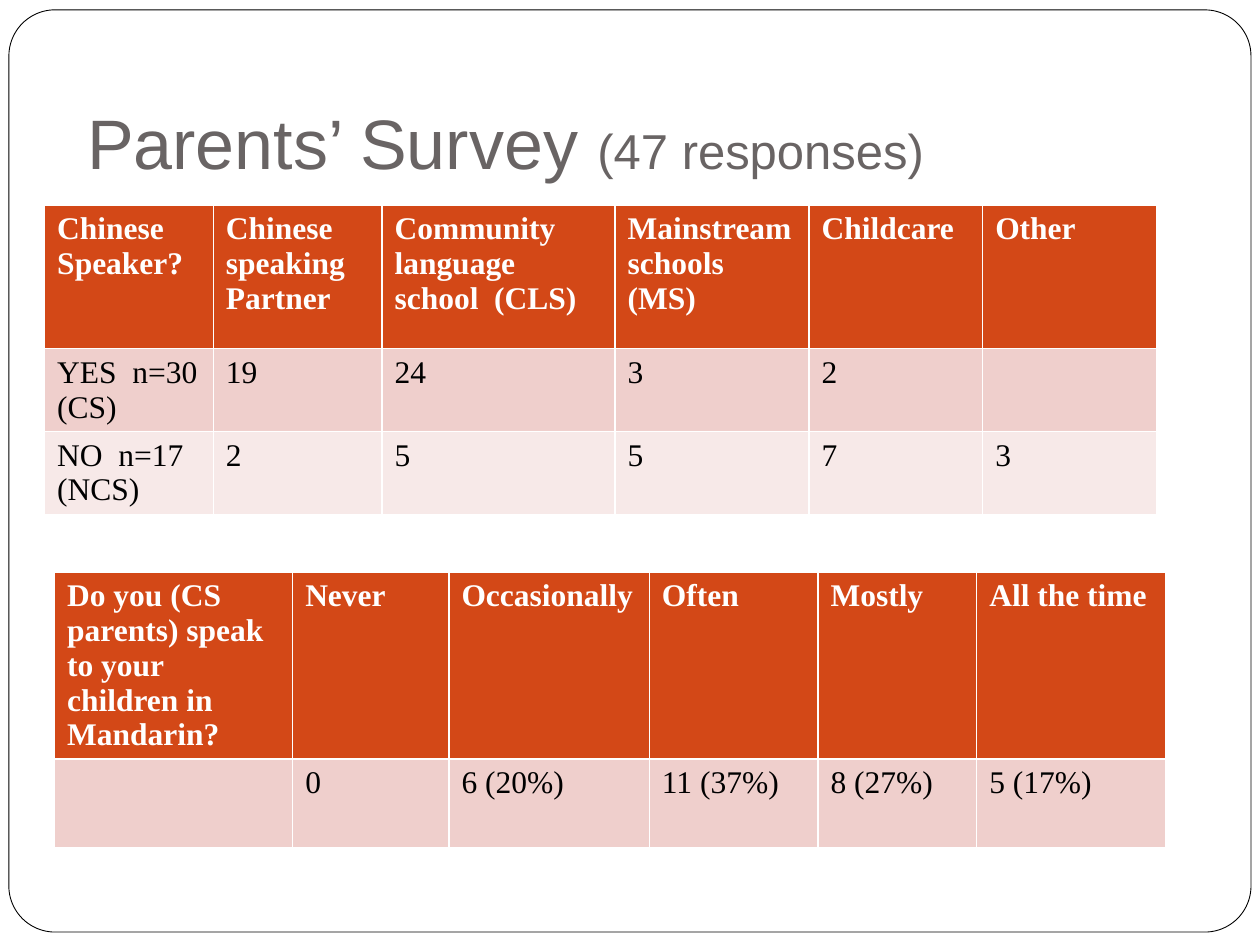
from dataclasses import dataclass

import pptx
import pptx.dml.color
import pptx.enum.shapes
import pptx.enum.text
import pptx.util

Cm = pptx.util.Cm
Pt = pptx.util.Pt
RGBColor = pptx.dml.color.RGBColor

WHITE = RGBColor(0xFF, 0xFF, 0xFF)
BLACK = RGBColor(0, 0, 0)
GREY = RGBColor(0x69, 0x64, 0x64)
RUST = RGBColor(0xD3, 0x48, 0x17)
ROSE = RGBColor(0xEF, 0xCF, 0xCC)
PALE = RGBColor(0xF7, 0xE9, 0xE8)
BANDS = (ROSE, PALE)


@dataclass
class Grid:
    """A survey table; lengths are in centimetres."""
    left: float
    top: float
    cols: list[float]
    rows: list[float]
    cells: list[list[str]]


SCHOOLS = Grid(
    0.9, 4.13, [3.4, 3.4, 4.7, 3.91, 3.5, 3.5], [2.9, 1.67, 1.67],
    [["Chinese Speaker?", "Chinese speaking Partner",
      "Community language school  (CLS)", "Mainstream schools (MS)",
      "Childcare", "Other"],
     ["YES  n=30\n(CS)", "19", "24", "3", "2", ""],
     ["NO  n=17\n(NCS)", "2", "5", "5", "7", "3"]])

SPEECH = Grid(
    1.1, 11.53, [4.8, 3.15, 4.04, 3.4, 3.2, 3.81], [3.76, 1.78],
    [["Do you (CS parents) speak to your children in Mandarin?", "Never",
      "Occasionally", "Often", "Mostly", "All the time"],
     ["", "0", "6 (20%)", "11 (37%)", "8 (27%)", "5 (17%)"]])


def draw_frame(slide) -> None:
    kind = pptx.enum.shapes.MSO_SHAPE.ROUNDED_RECTANGLE
    frame = slide.shapes.add_shape(kind, Cm(0.18), Cm(0.2), Cm(25.04), Cm(18.59))
    frame.adjustments[0] = 0.05
    frame.shadow.inherit = False
    frame.fill.solid()
    frame.fill.fore_color.rgb = WHITE
    frame.line.color.rgb = BLACK
    frame.line.width = Pt(0.5)


def draw_title(slide) -> None:
    title = slide.shapes.title
    # Bring the title in front of the frame
    slide.shapes.element.append(title.element)
    title.left, title.top = Cm(1.5), Cm(0.76)
    title.width, title.height = Cm(20.4), Cm(3.18)
    text = title.text_frame
    text.margin_bottom = Cm(0.25)
    text.vertical_anchor = pptx.enum.text.MSO_ANCHOR.BOTTOM
    line = text.paragraphs[0]
    line.alignment = pptx.enum.text.PP_ALIGN.LEFT
    line.font.name = "Arial"
    line.font.color.rgb = GREY
    for words, size in (("Parents’ Survey ", 40), ("(47 responses)", 28)):
        run = line.add_run()
        run.text = words
        run.font.size = Pt(size)


def fill_cell(cell, words: str, back: RGBColor, head: bool) -> None:
    cell.fill.solid()
    cell.fill.fore_color.rgb = back
    cell.text = words
    for line in cell.text_frame.paragraphs:
        line.font.name = "Times New Roman"
        line.font.size = Pt(18)
        line.font.bold = head
        line.font.color.rgb = WHITE if head else BLACK


def draw_grid(slide, grid: Grid) -> None:
    # The default table style supplies the white rules
    table = slide.shapes.add_table(
        len(grid.rows), len(grid.cols), Cm(grid.left), Cm(grid.top),
        Cm(sum(grid.cols)), Cm(sum(grid.rows))).table
    for col, width in zip(table.columns, grid.cols):
        col.width = Cm(width)
    for row, height in zip(table.rows, grid.rows):
        row.height = Cm(height)
    for r, texts in enumerate(grid.cells):
        back = BANDS[(r - 1) % 2] if r else RUST
        for c, words in enumerate(texts):
            fill_cell(table.cell(r, c), words, back, r == 0)


def main() -> None:
    deck = pptx.Presentation()
    deck.slide_width, deck.slide_height = Cm(25.4), Cm(19.05)
    slide = deck.slides.add_slide(deck.slide_layouts.get_by_name("Title Only"))
    draw_frame(slide)
    draw_title(slide)
    for grid in (SCHOOLS, SPEECH):
        draw_grid(slide, grid)
    deck.save("out.pptx")


if __name__ == "__main__":
    main()
